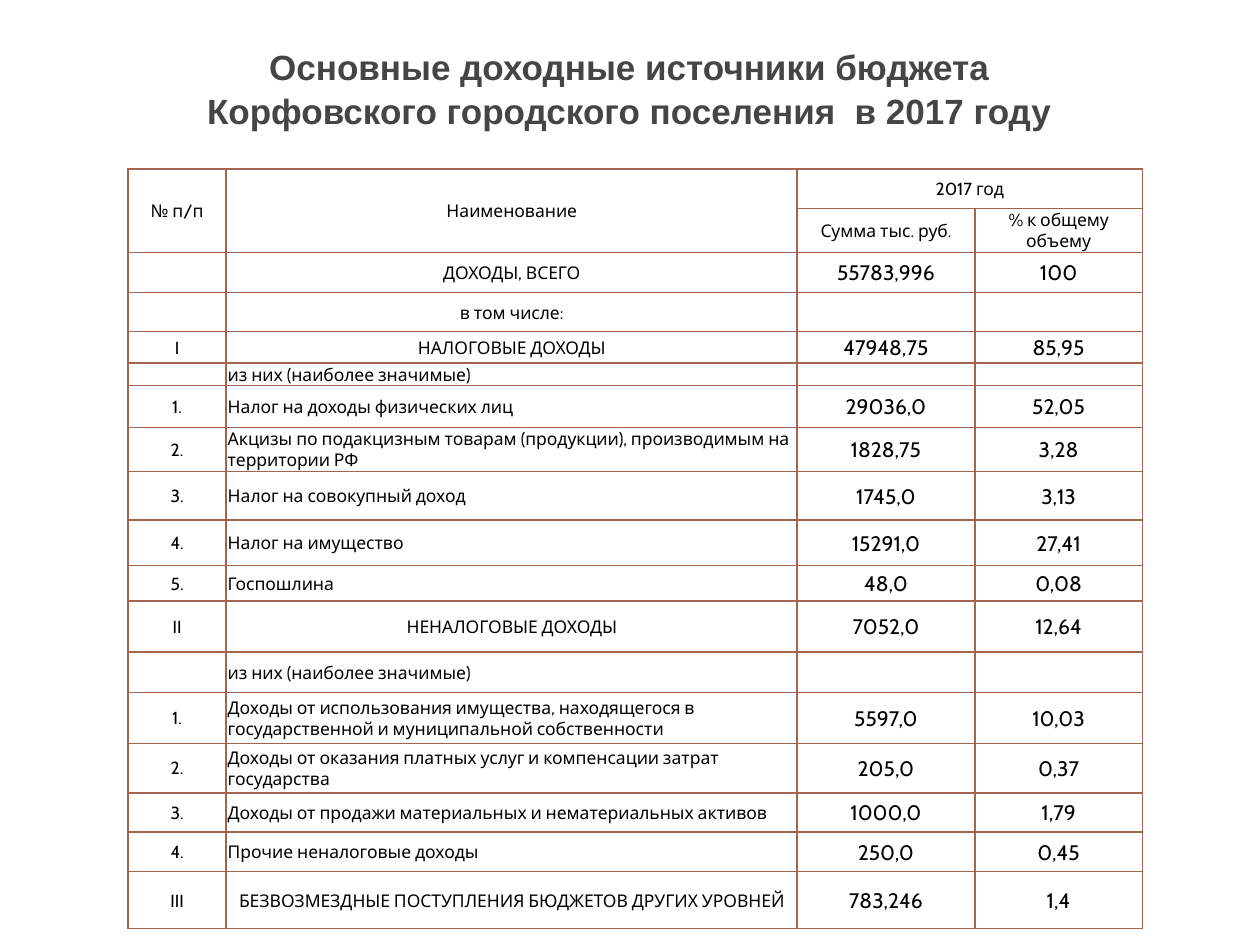
import dataclasses

import lxml.etree
import pptx
import pptx.dml.color
import pptx.enum.text
import pptx.oxml.ns
import pptx.util

Cm = pptx.util.Cm
Pt = pptx.util.Pt
PP_ALIGN = pptx.enum.text.PP_ALIGN
MSO_ANCHOR = pptx.enum.text.MSO_ANCHOR
qn = pptx.oxml.ns.qn


@dataclasses.dataclass
class Theme:
    title_color: str = "454545"
    text_color: str = "000000"
    border_color: str = "A5644E"
    title_font: str = "Arial"
    table_font: str = "Cabin"
    title_size: int = 20
    label_size: int = 10
    amount_size: int = 12
    border_width: int = 1


theme = Theme()


def add_run(paragraph, text, font_name, size, color, bold=False):
    run = paragraph.add_run()
    run.text = text
    run.font.name = font_name
    run.font.size = Pt(size)
    run.font.bold = bold
    run.font.color.rgb = pptx.dml.color.RGBColor.from_string(color)


def add_borders(cell):
    properties = cell._tc.get_or_add_tcPr()
    for side in ("a:lnL", "a:lnR", "a:lnT", "a:lnB"):
        line = lxml.etree.SubElement(properties, qn(side), w=str(Pt(theme.border_width)))
        fill = lxml.etree.SubElement(line, qn("a:solidFill"))
        lxml.etree.SubElement(fill, qn("a:srgbClr"), val=theme.border_color)


column_widths = [1.98, 11.51, 3.58, 3.38]
income_rows = [
    (0.79, "№ п/п", "Наименование", "2017 год", ""),
    (0.76, "", "", "Сумма тыс. руб.", "% к общему объему"),
    (0.81, "", "ДОХОДЫ, ВСЕГО", "55783,996", "100"),
    (0.79, "", "в том числе:", "", ""),
    (0.63, "I", "НАЛОГОВЫЕ ДОХОДЫ", "47948,75", "85,95"),
    (0.43, "", "из них (наиболее значимые)", "", ""),
    (0.84, "1.", "Налог на доходы физических лиц", "29036,0", "52,05"),
    (0.84, "2.", "Акцизы по подакцизным товарам (продукции), производимым на территории РФ", "1828,75", "3,28"),
    (0.98, "3.", "Налог на совокупный доход", "1745,0", "3,13"),
    (0.92, "4.", "Налог на имущество", "15291,0", "27,41"),
    (0.71, "5.", "Госпошлина", "48,0", "0,08"),
    (1.03, "II", "НЕНАЛОГОВЫЕ ДОХОДЫ", "7052,0", "12,64"),
    (0.82, "", "из них (наиболее значимые)", "", ""),
    (1.02, "1.", "Доходы от использования имущества, находящегося в государственной и муниципальной собственности", "5597,0", "10,03"),
    (1.0, "2.", "Доходы от оказания платных услуг и компенсации затрат государства", "205,0", "0,37"),
    (0.79, "3.", "Доходы от продажи материальных и нематериальных активов", "1000,0", "1,79"),
    (0.8, "4.", "Прочие неналоговые доходы", "250,0", "0,45"),
    (1.15, "III", "БЕЗВОЗМЕЗДНЫЕ ПОСТУПЛЕНИЯ БЮДЖЕТОВ ДРУГИХ УРОВНЕЙ", "783,246", "1,4"),
]
header_rows = 2
name_column = 1

presentation = pptx.Presentation()
presentation.slide_width = Cm(25.4)
presentation.slide_height = Cm(19.05)
slide = presentation.slides.add_slide(presentation.slide_layouts[5])

title = slide.shapes.title
title.left, title.top, title.width, title.height = Cm(3.07), Cm(0.71), Cm(19.23), Cm(3.18)
heading = title.text_frame
heading.word_wrap = True
heading.auto_size = pptx.enum.text.MSO_AUTO_SIZE.NONE
heading.vertical_anchor = MSO_ANCHOR.TOP
heading.margin_top = Cm(0.17)
heading.paragraphs[0].alignment = PP_ALIGN.CENTER
heading.paragraphs[0].line_spacing = 1.05
add_run(heading.paragraphs[0],
        "Основные доходные источники бюджета Корфовского городского поселения  в 2017 году",
        theme.title_font, theme.title_size, theme.title_color, bold=True)

income_table = slide.shapes.add_table(
    len(income_rows), len(column_widths), Cm(2.58), Cm(3.41),
    Cm(sum(column_widths)), Cm(sum(row[0] for row in income_rows))).table
income_table.first_row = False
income_table.horz_banding = False
for column, width in zip(income_table.columns, column_widths):
    column.width = Cm(width)

for row_index, (height, *texts) in enumerate(income_rows):
    income_table.rows[row_index].height = Cm(height)
    is_detail = texts[0].endswith(".") or texts[name_column].startswith("из них")
    for column_index, text in enumerate(texts):
        cell = income_table.cell(row_index, column_index)
        add_borders(cell)
        cell.fill.background()
        cell.vertical_anchor = MSO_ANCHOR.MIDDLE
        cell.margin_left = cell.margin_right = cell.margin_top = Cm(0.03)
        cell.margin_bottom = 0
        paragraph = cell.text_frame.paragraphs[0]
        is_left = is_detail and column_index == name_column
        paragraph.alignment = PP_ALIGN.LEFT if is_left else PP_ALIGN.CENTER
        is_amount = row_index >= header_rows and column_index > name_column
        if text:
            size = theme.amount_size if is_amount else theme.label_size
            add_run(paragraph, text, theme.table_font, size, theme.text_color)
        else:
            lxml.etree.SubElement(paragraph._p, qn("a:endParaRPr"), sz=str(theme.label_size * 100))

for column_index in (0, name_column):
    income_table.cell(0, column_index).merge(income_table.cell(1, column_index))
income_table.cell(0, 2).merge(income_table.cell(0, 3))

presentation.save("out.pptx")
